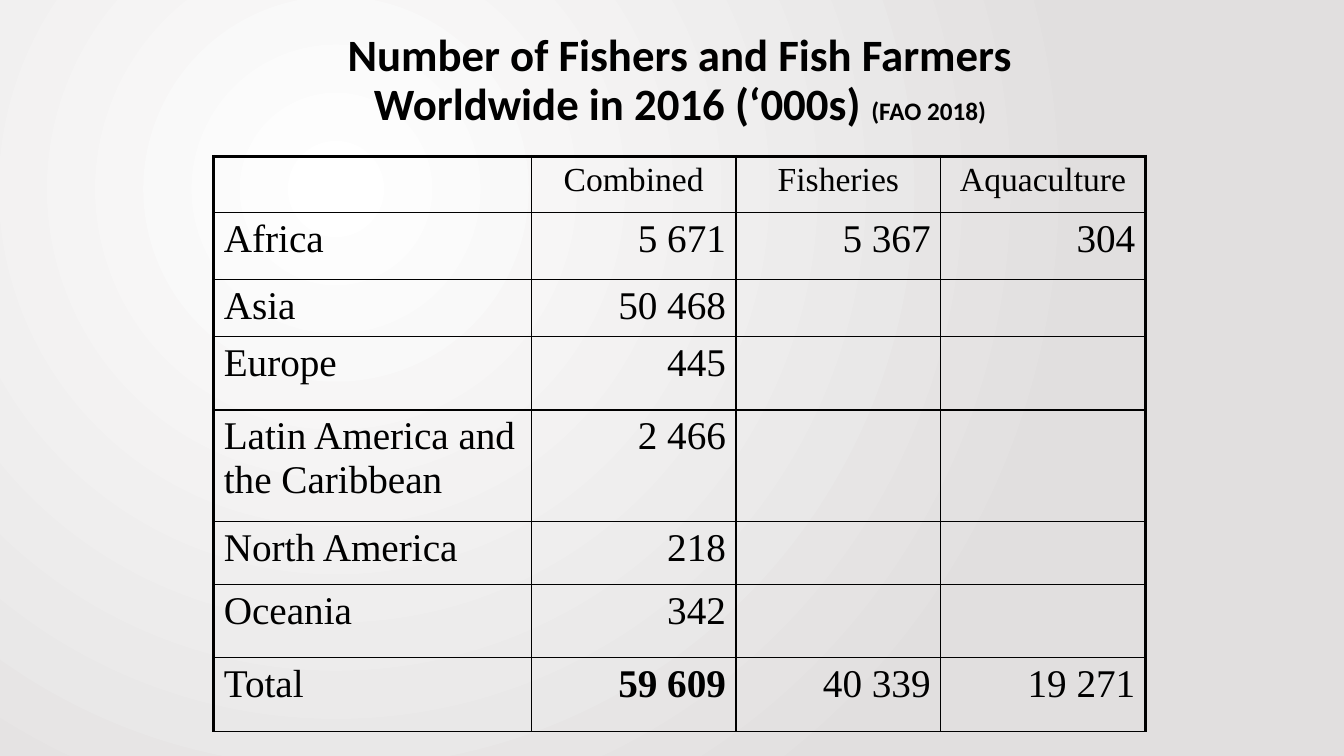
from dataclasses import dataclass

from lxml.etree import SubElement
from pptx import Presentation
from pptx.dml.color import RGBColor
from pptx.enum.text import MSO_ANCHOR, PP_ALIGN as Align
from pptx.oxml.ns import qn
from pptx.util import Inches, Pt


@dataclass(frozen=True)
class Theme:
    ink: str = "000000"
    glow: str = "FFFFFF"
    edge: str = "E1DFDF"
    title_font: str = "Calibri"
    table_font: str = "Times New Roman"
    title_size: float = 32
    source_size: float = 18
    header_size: float = 24
    body_size: float = 28
    outer_line: float = 2.25
    inner_line: float = 1


THEME = Theme()

COLUMN_WIDTHS = [3.15, 2.03, 2.03, 2.03]
ROW_HEIGHTS = [0.56, 0.66, 0.56, 0.73, 1.11, 0.62, 0.73, 0.73]
FISHERS = [
    ["", "Combined", "Fisheries", "Aquaculture"],
    ["Africa", "5 671", "5 367", "304"],
    ["Asia", "50 468", "", ""],
    ["Europe", "445", "", ""],
    ["Latin America and the Caribbean", "2 466", "", ""],
    ["North America", "218", "", ""],
    ["Oceania", "342", "", ""],
    ["Total", "59 609", "40 339", "19 271"],
]


def paint_background(page):
    """Radial gradient centred in the upper left quarter."""
    fill = page.background.fill
    fill.gradient()
    for stop, color in zip(fill.gradient_stops, (THEME.glow, THEME.edge)):
        stop.color.rgb = RGBColor.from_string(color)
    linear = page.element.find(".//" + qn("a:lin"))
    gradient = linear.getparent()
    gradient.remove(linear)
    circle = SubElement(gradient, qn("a:path"), {"path": "circle"})
    SubElement(circle, qn("a:fillToRect"),
               {"l": "50000", "t": "50000", "r": "100000", "b": "100000"})


def add_title(page, left, top, width, height):
    box = page.shapes.add_textbox(Inches(left), Inches(top), Inches(width), Inches(height))
    frame = box.text_frame
    frame.word_wrap = True
    frame.vertical_anchor = MSO_ANCHOR.MIDDLE
    para = frame.paragraphs[0]
    para.alignment = Align.CENTER
    para.line_spacing = 0.9
    para.font.name = THEME.title_font
    para.font.bold = True
    para.font.color.rgb = RGBColor.from_string(THEME.ink)
    for text, size in (
        ("Number of Fishers and Fish Farmers Worldwide in 2016 (‘000s) ", THEME.title_size),
        ("(FAO 2018)", THEME.source_size),
    ):
        span = para.add_run()
        span.text = text
        # Direct font settings keep the two sizes and the face on the runs
        span.font.size = Pt(size)
        span.font.name = THEME.title_font
        span.font.bold = True


def set_borders(cell, outer_sides):
    properties = cell._tc.get_or_add_tcPr()
    for side in "LRTB":
        weight = THEME.outer_line if side in outer_sides else THEME.inner_line
        line = SubElement(properties, qn(f"a:ln{side}"), w=str(Pt(weight)))
        solid = SubElement(line, qn("a:solidFill"))
        SubElement(solid, qn("a:srgbClr"), val=THEME.ink)


def write_cell(cell, text, size, alignment, bold):
    para = cell.text_frame.paragraphs[0]
    para.alignment = alignment
    before = SubElement(para._p.get_or_add_pPr(), qn("a:spcBef"))
    SubElement(before, qn("a:spcPct"), val="20000")
    span = para.add_run()
    span.text = text
    span.font.name = THEME.table_font
    span.font.size = Pt(size)
    span.font.bold = bold
    span.font.color.rgb = RGBColor.from_string(THEME.ink)


def add_fishers_table(page, left, top):
    rows, columns = len(ROW_HEIGHTS), len(COLUMN_WIDTHS)
    table = page.shapes.add_table(
        rows, columns, Inches(left), Inches(top),
        Inches(sum(COLUMN_WIDTHS)), Inches(sum(ROW_HEIGHTS)),
    ).table
    table.first_row = table.horz_banding = False
    for column, width in zip(table.columns, COLUMN_WIDTHS):
        column.width = Inches(width)
    for row, height in zip(table.rows, ROW_HEIGHTS):
        row.height = Inches(height)

    for r, values in enumerate(FISHERS):
        for c, text in enumerate(values):
            cell = table.cell(r, c)
            # Heavy frame on the left, top and right; open at the bottom
            outer_sides = ("L" * (c == 0)) + ("T" * (r == 0)) + ("R" * (c == columns - 1))
            set_borders(cell, outer_sides)
            cell.fill.background()
            if text:
                size = THEME.header_size if r == 0 else THEME.body_size
                number_side = Align.CENTER if r == 0 else Align.RIGHT
                write_cell(cell, text, size, number_side if c else Align.LEFT,
                           bold=(r == rows - 1 and c == 1))


def main():
    deck = Presentation()
    deck.slide_width, deck.slide_height = Inches(13.33), Inches(7.5)
    page = deck.slides.add_slide(deck.slide_layouts[6])
    paint_background(page)
    add_title(page, 2.33, 0.31, 8.83, 1)
    add_fishers_table(page, 2.12, 1.55)
    deck.save("out.pptx")


if __name__ == "__main__":
    main()
